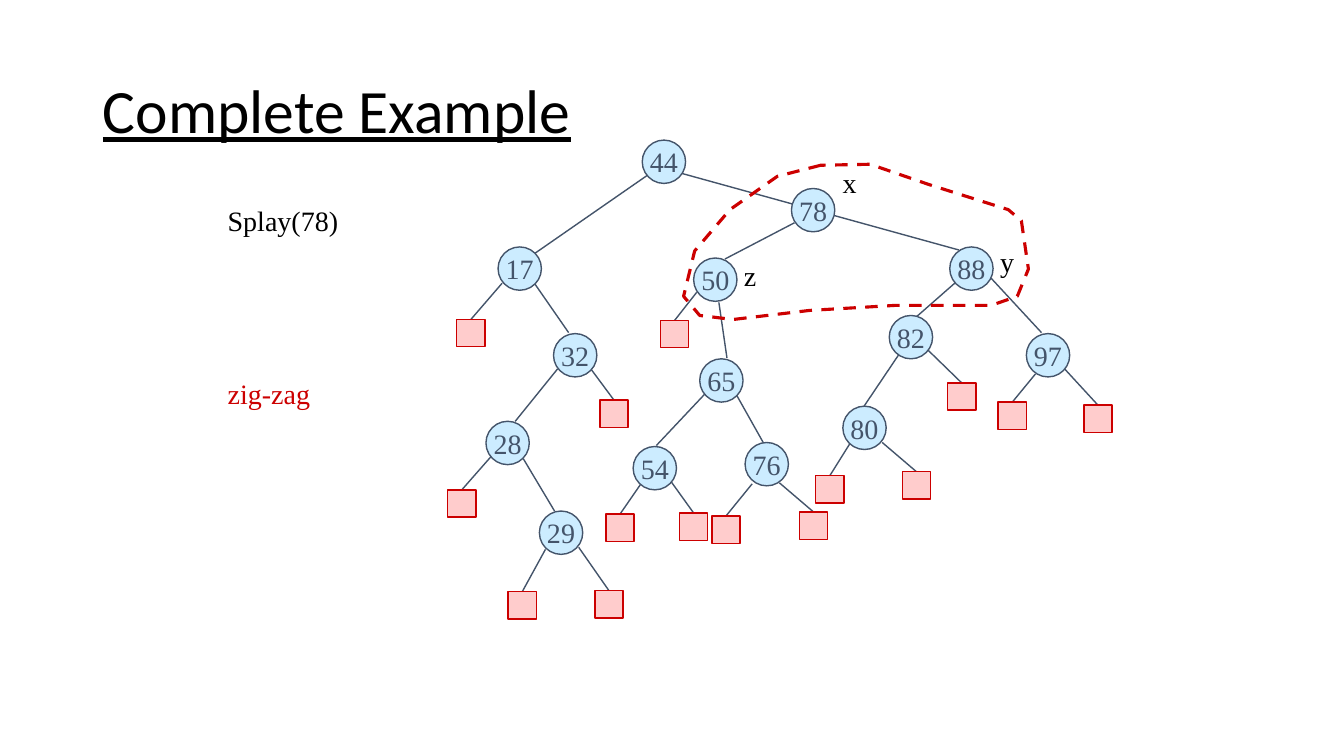
from pptx import Presentation
from pptx.dml.color import RGBColor
from pptx.enum.dml import MSO_LINE
from pptx.enum.shapes import MSO_CONNECTOR, MSO_SHAPE
from pptx.enum.text import MSO_ANCHOR, MSO_AUTO_SIZE, PP_ALIGN
from pptx.oxml.ns import qn
from pptx.util import Inches, Pt

# Content
TITLE = "Complete Example"
COLORS = {"black": "000000", "slate": "44546A", "sky": "CCECFF",
          "red": "CC0000", "pink": "FFCCCC"}
SERIF = "Times New Roman"
NODE = 0.43
LEAF_W, LEAF_H = 0.28, 0.27

# Key: (left, top)
NODES = {
    44: (6.37, 1.39), 88: (9.42, 2.45), 17: (4.94, 2.45), 65: (6.94, 3.56),
    97: (10.18, 3.31), 32: (5.49, 3.31), 28: (4.82, 4.18), 54: (6.28, 4.43),
    82: (8.82, 3.13), 29: (5.35, 5.07), 80: (8.36, 4.03), 76: (7.39, 4.39),
    50: (6.88, 2.56), 78: (7.85, 1.87),
}
# Branches between keys: start, end
BRANCHES = [
    ((6.42, 1.74), (5.31, 2.51)),   # 44 - 17
    ((6.76, 1.72), (9.51, 2.48)),   # 44 - 78 - 88
    ((7.88, 2.21), (7.19, 2.57)),   # 78 - 50
    ((5.30, 2.81), (5.64, 3.30)),   # 17 - 32
    ((5.53, 3.66), (5.11, 4.18)),   # 32 - 28
    ((5.19, 4.55), (5.50, 5.07)),   # 28 - 29
    ((7.13, 3.00), (7.21, 3.55)),   # 50 - 65
    ((6.99, 3.91), (6.51, 4.42)),   # 65 - 54
    ((7.30, 3.91), (7.57, 4.39)),   # 65 - 76
    ((9.48, 2.80), (9.07, 3.16)),   # 88 - 82
    ((9.83, 2.76), (10.33, 3.30)),  # 88 - 97
    ((8.92, 3.51), (8.57, 4.03)),   # 82 - 80
]
# Empty leaves: branch start at the parent, then (left, top) of the leaf
LEAVES = [
    ((4.98, 2.81), (4.53, 3.17)),   # 17
    ((5.86, 3.66), (5.95, 3.97)),   # 32
    ((4.87, 4.53), (4.44, 4.86)),   # 28
    ((5.41, 5.45), (5.04, 5.87)),   # 29
    ((5.74, 5.43), (5.90, 5.86)),
    ((6.91, 2.90), (6.55, 3.18)),   # 50
    ((6.35, 4.81), (6.01, 5.10)),   # 54
    ((6.65, 4.77), (6.74, 5.09)),
    ((7.46, 4.80), (7.06, 5.12)),   # 76
    ((7.73, 4.79), (7.93, 5.08)),
    ((9.20, 3.47), (9.40, 3.80)),   # 82
    ((8.43, 4.40), (8.09, 4.72)),   # 80
    ((8.75, 4.39), (8.95, 4.68)),
    ((10.27, 3.71), (9.90, 3.99)),  # 97
    ((10.55, 3.65), (10.75, 4.02)),
]
# Text, left, top, width, colour
LABELS = [
    ("Splay(78)", 2.16, 1.97, 1.30, "black"),
    ("zig-zag", 2.16, 3.69, 1.02, "red"),
    ("z", 7.28, 2.52, 0.32, "black"),
    ("y", 9.82, 2.38, 0.34, "black"),
    ("x", 8.26, 1.59, 0.34, "black"),
]
LOOP = [
    (8.14, 1.64), (7.71, 1.75), (7.24, 2.08), (6.89, 2.49), (6.78, 2.94),
    (6.94, 3.13), (7.27, 3.17), (8.03, 3.08), (8.88, 3.03), (9.83, 3.03),
    (10.09, 2.94), (10.20, 2.67), (10.13, 2.19), (10.00, 2.08), (9.21, 1.83),
    (8.63, 1.63),
]


def rgb(name):
    return RGBColor.from_string(COLORS[name])


def box(*lengths):
    return [Inches(v) for v in lengths]


def set_text(tf, text, size, font, color):
    tf.text = text
    f = tf.paragraphs[0].runs[0].font
    f.size, f.name, f.color.rgb = Pt(size), font, rgb(color)
    return f


def set_line(sp, color, width=1):
    sp.line.color.rgb, sp.line.width = rgb(color), Pt(width)


def add_part(kind, left, top, width, height, fill, line):
    sp = s.shapes.add_shape(kind, *box(left, top, width, height))
    sp.shadow.inherit = False
    sp.fill.solid()
    sp.fill.fore_color.rgb = rgb(fill)
    set_line(sp, line)
    return sp


def add_branch(start, end):
    cx = s.shapes.add_connector(MSO_CONNECTOR.STRAIGHT, *box(*start, *end))
    set_line(cx, "slate")
    sp_pr = cx._element.spPr
    sp_pr.append(sp_pr.makeelement(qn("a:effectLst"), {}))


prs = Presentation()
prs.slide_width, prs.slide_height = box(13.33, 7.5)
s = prs.slides.add_slide(prs.slide_layouts[5])

# Title
title = s.shapes.title
title.left, title.top, title.width, title.height = box(0.92, 0.4, 11.5, 1.45)
tf = title.text_frame
set_text(tf, TITLE, 44, "Calibri", "black").underline = True
tf.auto_size = MSO_AUTO_SIZE.NONE
tf.vertical_anchor = MSO_ANCHOR.MIDDLE
tf.paragraphs[0].alignment = PP_ALIGN.LEFT
tf.paragraphs[0].line_spacing = 0.9

# Branches, each leaf joined at the middle of its top edge
for start, end in BRANCHES:
    add_branch(start, end)
for start, (left, top) in LEAVES:
    add_branch(start, (left + LEAF_W / 2, top))
    add_part(MSO_SHAPE.RECTANGLE, left, top, LEAF_W, LEAF_H, "pink", "red")

# Keys
for key, (left, top) in NODES.items():
    sp = add_part(MSO_SHAPE.OVAL, left, top, NODE, NODE, "sky", "slate")
    tf = sp.text_frame
    set_text(tf, str(key), 20, SERIF, "slate")
    tf.word_wrap = False
    tf.vertical_anchor = MSO_ANCHOR.MIDDLE
    tf.paragraphs[0].alignment = PP_ALIGN.CENTER

# Labels
for text, left, top, width, color in LABELS:
    tf = s.shapes.add_textbox(*box(left, top, width, 0.43)).text_frame
    set_text(tf, text, 20, SERIF, color)
    tf.word_wrap = False
    tf.auto_size = MSO_AUTO_SIZE.SHAPE_TO_FIT_TEXT

# Dashed loop around x, y and z
points = [box(*point) for point in LOOP]
builder = s.shapes.build_freeform(*points[0])
builder.add_line_segments(points[1:], close=True)
loop = builder.convert_to_shape()
loop.shadow.inherit = False
loop.fill.background()
set_line(loop, "red", 2.25)
loop.line.dash_style = MSO_LINE.DASH

prs.save("out.pptx")
